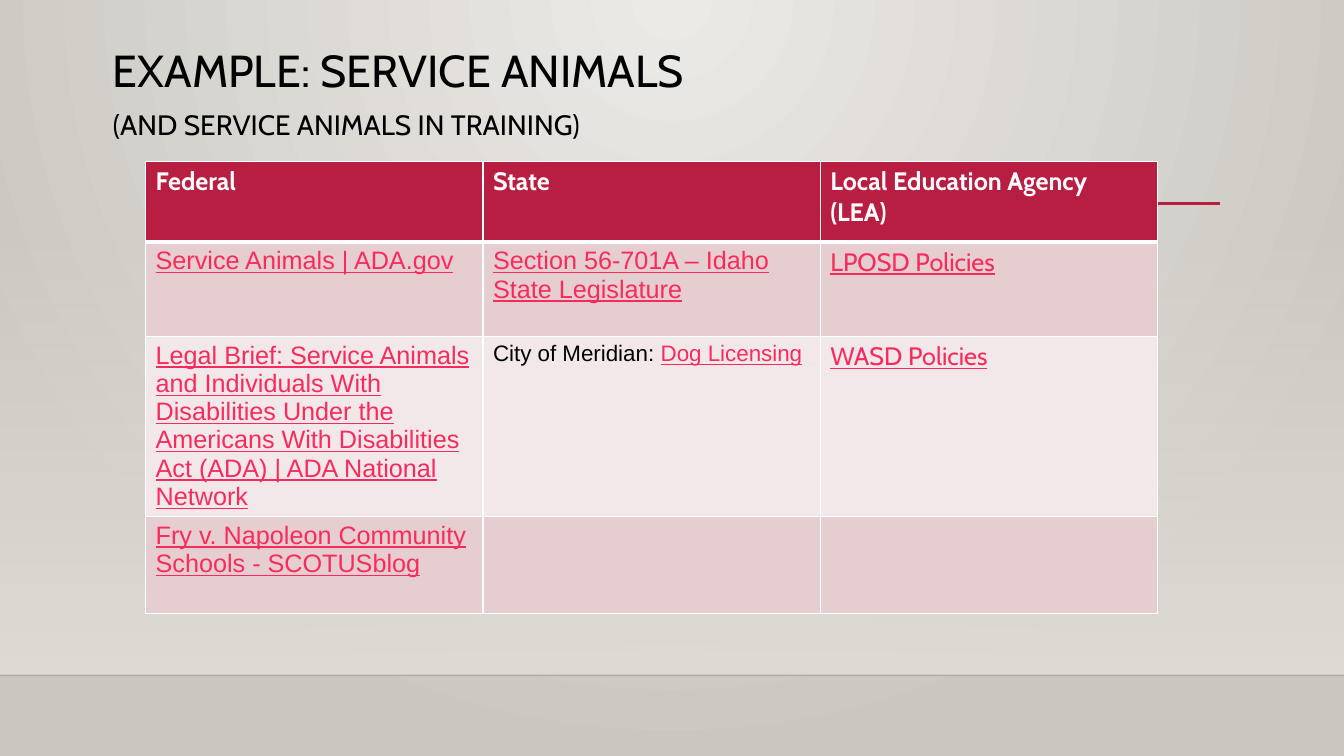
import pptx
import pptx.dml.color
import pptx.enum.shapes
import pptx.enum.text
import pptx.oxml
import pptx.oxml.ns
import pptx.util

Pt = pptx.util.Pt
qn = pptx.oxml.ns.qn

INK = {"black": "000000", "white": "FFFFFF", "red": "B71E42", "link": "FA2B5C",
       "rose": "E6CDCF", "pale": "F3E8E9", "glow": "ECEAE7", "edge": "CAC7C1",
       "wall": "DFDBD5", "floor": "000001"}

TITLE = [("EXAMPLE: SERVICE ANIMALS", 32, 0), ("(AND SERVICE ANIMALS IN TRAINING)", 20, 10)]

# Each cell is a list of runs: text and style.
ROWS = [
    [[("Federal", "head")], [("State", "head")], [("Local Education Agency (LEA)", "head")]],
    [[("Service Animals | ADA.gov", "link")],
     [("Section 56-701A – Idaho State Legislature", "link")],
     [("LPOSD Policies", "local")]],
    [[("Legal Brief: Service Animals and Individuals With Disabilities Under the "
       "Americans With Disabilities Act (ADA) | ADA National Network", "link")],
     [("City of Meridian: ", "plain"), ("Dog Licensing", "small")],
     [("WASD Policies", "local")]],
    [[("Fry v. Napoleon Community Schools - SCOTUSblog", "link")], [], []],
]
HIGH = [57.6, 67.5, 128.5, 69.5]
FILLS = ["red", "rose", "pale", "rose"]
COL = 241

STYLES = {
    "head": {"name": "Cabin", "size": Pt(18), "bold": True, "ink": "white"},
    "link": {"name": "Arial", "size": Pt(18), "bold": False, "underline": True, "ink": "link"},
    "local": {"name": "Cabin", "size": Pt(18), "bold": False, "underline": True, "ink": "link"},
    "plain": {"name": "Arial", "size": Pt(16), "bold": False, "ink": "black"},
    "small": {"name": "Arial", "size": Pt(16), "bold": False, "underline": True, "ink": "link"},
}

WIDE, TALL, FLOOR = 960, 540, 482.4
LINES = [(0, WIDE, FLOOR, "floor", 1, 20), (114.5, 871.2, 145.4, "red", 2.5, 100)]

NS = 'xmlns:a="http://schemas.openxmlformats.org/drawingml/2006/main"'


def rgb(name):
    return pptx.dml.color.RGBColor.from_string(INK[name])


def style(font, form):
    for key, value in form.items():
        if key == "ink":
            font.color.rgb = rgb(value)
        else:
            setattr(font, key, value)


def blend(root, stops, shade):
    """Replace the first gradient in root; stops are (place, colour, alpha)."""
    marks = "".join(
        f'<a:gs pos="{place * 1000}"><a:srgbClr val="{INK[name]}">'
        f'<a:alpha val="{alpha * 1000}"/></a:srgbClr></a:gs>'
        for place, name, alpha in stops)
    old = next(root.iter(qn("a:gradFill")))
    new = pptx.oxml.parse_xml(
        f'<a:gradFill {NS} rotWithShape="1"><a:gsLst>{marks}</a:gsLst>{shade}</a:gradFill>')
    old.getparent().replace(old, new)


def border(cell, foot):
    props = cell._tc.get_or_add_tcPr()
    sides = {"lnL": 1, "lnR": 1, "lnT": 1, "lnB": foot}
    for spot, (side, width) in enumerate(sides.items()):
        props.insert(spot, pptx.oxml.parse_xml(
            f'<a:{side} {NS} w="{Pt(width)}"><a:solidFill>'
            f'<a:srgbClr val="{INK["white"]}"/></a:solidFill></a:{side}>'))


def scene(slide):
    slide.background.fill.gradient()
    blend(slide.element, [(0, "glow", 100), (100, "edge", 100)],
          '<a:path path="circle"><a:fillToRect l="43000" t="0" r="43000" b="100000"/></a:path>')
    wall = slide.shapes.add_shape(pptx.enum.shapes.MSO_SHAPE.RECTANGLE,
                                  0, Pt(159), Pt(WIDE), Pt(FLOOR - 159))
    wall.shadow.inherit = False
    wall.line.fill.background()
    wall.fill.gradient()
    blend(wall.element, [(0, "wall", 0), (100, "wall", 100)],
          '<a:lin ang="5400000" scaled="0"/>')
    for left, right, y, ink, width, alpha in LINES:
        rule = slide.shapes.add_connector(pptx.enum.shapes.MSO_CONNECTOR.STRAIGHT,
                                          Pt(left), Pt(y), Pt(right), Pt(y))
        rule.line.width = Pt(width)
        rule.line.color.rgb = rgb(ink)
        tint = next(rule.element.iter(qn("a:srgbClr")))
        tint.append(pptx.oxml.parse_xml(f'<a:alpha {NS} val="{alpha * 1000}"/>'))
        rule.element.spPr.append(pptx.oxml.parse_xml(f'<a:effectLst {NS}/>'))


def head(slide):
    title = slide.shapes.title
    slide.shapes.element.append(title.element)
    title.left, title.top, title.width, title.height = map(Pt, (73.4, 31, 626.4, 85))
    frame = title.text_frame
    frame.auto_size = pptx.enum.text.MSO_AUTO_SIZE.NONE
    frame.vertical_anchor = pptx.enum.text.MSO_ANCHOR.TOP
    frame.word_wrap = True
    frame.text = "\n".join(text for text, size, gap in TITLE)
    for para, (text, size, gap) in zip(frame.paragraphs, TITLE):
        para.alignment = pptx.enum.text.PP_ALIGN.LEFT
        para.line_spacing = 0.9
        para.space_before = Pt(gap)
        style(para.runs[0].font, {"name": "Cabin", "size": Pt(size), "ink": "black"})


def grid(slide):
    count = len(ROWS[0])
    table = slide.shapes.add_table(len(ROWS), count, Pt(104), Pt(115.2),
                                   Pt(COL * count), Pt(sum(HIGH))).table
    for col in table.columns:
        col.width = Pt(COL)
    for r, row in enumerate(ROWS):
        table.rows[r].height = Pt(HIGH[r])
        for c, runs in enumerate(row):
            cell = table.cell(r, c)
            cell.fill.solid()
            cell.fill.fore_color.rgb = rgb(FILLS[r])
            border(cell, 1 if r else 3)
            for text, kind in runs:
                run = cell.text_frame.paragraphs[0].add_run()
                run.text = text
                style(run.font, STYLES[kind])


def main():
    deck = pptx.Presentation()
    deck.slide_width, deck.slide_height = Pt(WIDE), Pt(TALL)
    slide = deck.slides.add_slide(deck.slide_layouts[5])
    scene(slide)
    head(slide)
    grid(slide)
    deck.save("out.pptx")


if __name__ == "__main__":
    main()
